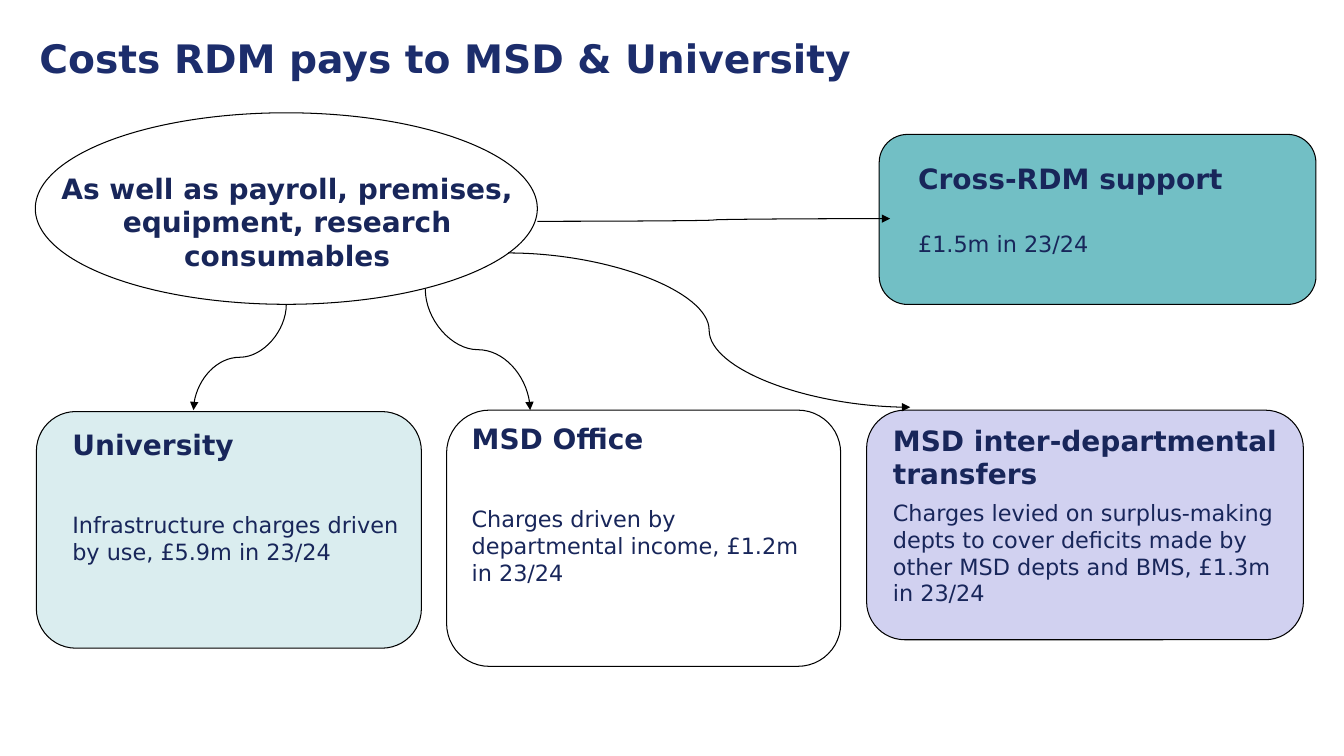
import pptx
import pptx.dml.color
import pptx.enum.shapes
import pptx.enum.text
import pptx.oxml
import pptx.oxml.ns
import pptx.util

Pt = pptx.util.Pt
Align = pptx.enum.text.PP_ALIGN
ShapeType = pptx.enum.shapes.MSO_SHAPE
FONT = "DejaVu Sans"
NAVY, TITLE_BLUE, BLACK = "18265A", "1C2D6C", "000000"

HEADING = {"name": FONT, "size": Pt(20), "bold": True}
BODY = {"name": FONT, "size": Pt(16), "bold": False}
TITLE = {"name": FONT, "size": Pt(28), "bold": True}

# outline box, text box, fill, heading, body, gap below the heading
PANELS = [
    ((628, 96, 312, 121.5), (648.7, 111.6, 280, 76.3), "72BFC5",
     "Cross-RDM support", "£1.5m in 23/24", 25),
    ((26, 294, 275, 169), (44.6, 301.7, 253.4, 135.4), "DAEDEF",
     "University", "Infrastructure charges driven by use, £5.9m in 23/24", 36),
    ((319, 293, 281.5, 183), (329.8, 297.4, 260.6, 126), None,
     "MSD Office", "Charges driven by departmental income, £1.2m in 23/24", 36),
    ((619, 293, 312, 164), (630.7, 298.8, 288.7, 135.4), "D1D1F0",
     "MSD inter-departmental transfers",
     "Charges levied on surplus-making depts to cover deficits made by "
     "other MSD depts and BMS, £1.3m in 23/24", 6),
]


def rgb(value):
    return pptx.dml.color.RGBColor.from_string(value)


def points(lengths):
    return [Pt(length) for length in lengths]


def write(paragraph, text, formats, color=NAVY, align=Align.LEFT, gap=0):
    paragraph.text = text
    paragraph.alignment = align
    paragraph.space_after = Pt(gap)
    for name, value in formats.items():
        setattr(paragraph.font, name, value)
    paragraph.font.color.rgb = rgb(color)


def add_title(slide, text):
    title = slide.shapes.title
    title.left, title.top, title.width, title.height = points((21, 21, 720, 52.5))
    title.fill.solid()
    title.fill.fore_color.rgb = rgb("FFFFFF")
    frame = title.text_frame
    frame.auto_size = pptx.enum.text.MSO_AUTO_SIZE.NONE
    frame.vertical_anchor = pptx.enum.text.MSO_ANCHOR.TOP
    write(frame.paragraphs[0], text, TITLE, TITLE_BLUE, gap=12)


def add_outline(shapes, kind, box, fill=None):
    shape = shapes.add_shape(kind, *points(box))
    shape.shadow.inherit = False
    if fill:
        shape.fill.solid()
        shape.fill.fore_color.rgb = rgb(fill)
    else:
        shape.fill.background()
    shape.line.color.rgb = rgb(BLACK)
    shape.line.width = Pt(0.75)


def add_text_frame(shapes, box):
    frame = shapes.add_textbox(*points(box)).text_frame
    frame.word_wrap = True
    return frame


def add_panel(slide, box, text_box, fill, heading, body, gap):
    shapes = slide.shapes.add_group_shape().shapes
    add_outline(shapes, ShapeType.ROUNDED_RECTANGLE, box, fill)
    frame = add_text_frame(shapes, text_box)
    write(frame.paragraphs[0], heading, HEADING, gap=gap)
    write(frame.add_paragraph(), body, BODY)


def add_curved_arrow(slide, start, end, downward=False):
    """Draw a curve that leaves sideways, or downward by turning its frame."""
    rotation = None
    if downward:
        (x1, y1), (x2, y2) = start, end
        middle_x, middle_y = (x1 + x2) / 2, (y1 + y2) / 2
        side = 1 if x2 < x1 else -1
        half_width, half_height = side * (y2 - y1) / 2, abs(x2 - x1) / 2
        start = (middle_x - half_width, middle_y - half_height)
        end = (middle_x + half_width, middle_y + half_height)
        rotation = 90 if side == 1 else 270
    connector = slide.shapes.add_connector(
        pptx.enum.shapes.MSO_CONNECTOR.CURVE, *points(start + end))
    connector.line.color.rgb = rgb(BLACK)
    connector.line.width = Pt(0.75)
    properties = connector.element.spPr
    if rotation:
        properties.find(pptx.oxml.ns.qn("a:xfrm")).set("rot", str(rotation * 60000))
    namespace = pptx.oxml.ns.nsdecls("a")
    properties.find(pptx.oxml.ns.qn("a:ln")).append(
        pptx.oxml.parse_xml(f'<a:tailEnd {namespace} type="triangle"/>'))
    properties.append(pptx.oxml.parse_xml(f"<a:effectLst {namespace}/>"))


def main():
    presentation = pptx.Presentation()
    presentation.slide_width, presentation.slide_height = Pt(960), Pt(540)
    slide = presentation.slides.add_slide(presentation.slide_layouts[5])
    add_title(slide, "Costs RDM pays to MSD & University")

    for panel in PANELS:
        add_panel(slide, *panel)

    add_outline(slide.shapes, ShapeType.OVAL, (25.2, 80.6, 358.6, 136.8))
    frame = add_text_frame(slide.shapes, (26.6, 118.8, 357.1, 80))
    write(frame.paragraphs[0],
          "As well as payroll, premises, equipment, research consumables",
          HEADING, align=Align.CENTER)

    add_curved_arrow(slide, (303.8, 206.6), (378.7, 293), downward=True)
    add_curved_arrow(slide, (204.5, 217.4), (138.2, 293), downward=True)
    add_curved_arrow(slide, (383.8, 158.1), (635.8, 156.2))
    add_curved_arrow(slide, (362.9, 180.7), (650.2, 290.9))
    presentation.save("out.pptx")


if __name__ == "__main__":
    main()
